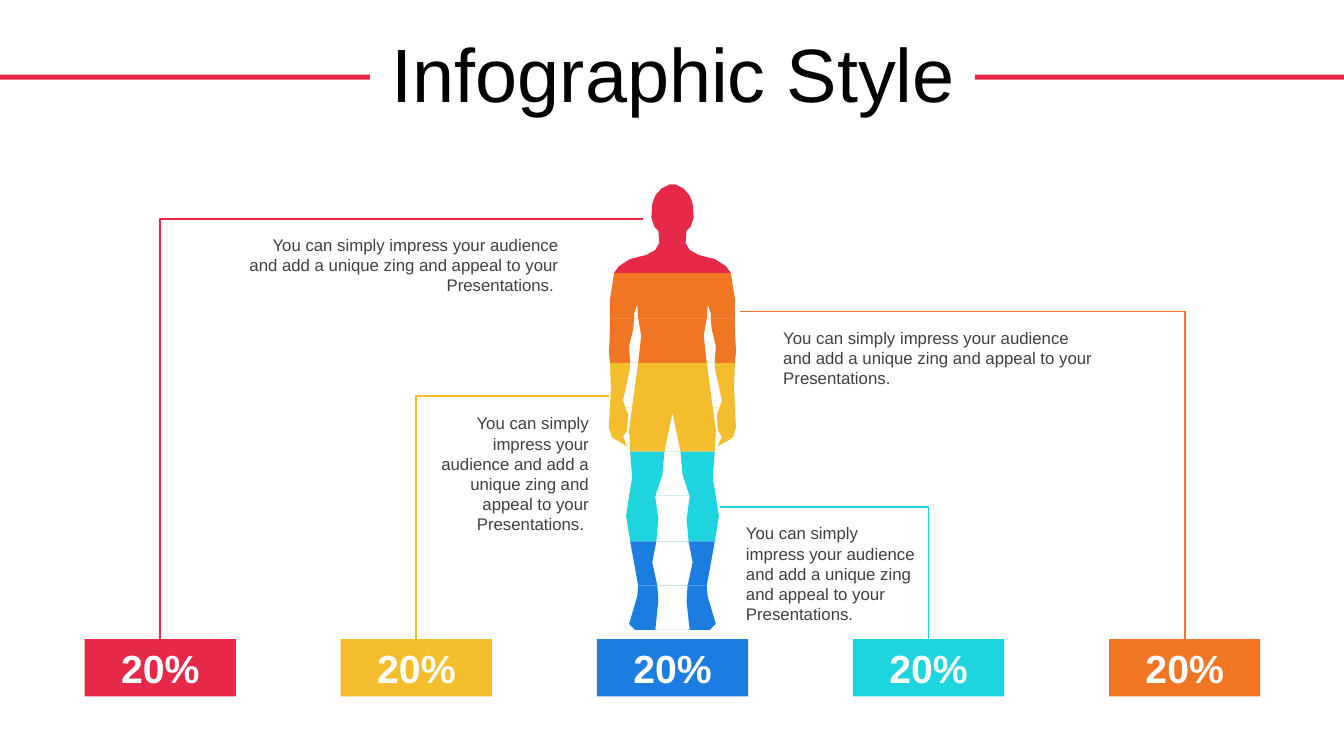
from itertools import pairwise

from lxml import etree
from pptx import Presentation
from pptx import util as u
from pptx.dml.color import RGBColor
from pptx.enum import shapes, text
from pptx.oxml.ns import qn

PX = 9144  # 100 px to the inch
RED = RGBColor(0xE6, 0x29, 0x49)
ORANGE = RGBColor(0xF0, 0x76, 0x24)
YELLOW = RGBColor(0xF4, 0xBD, 0x2D)
TEAL = RGBColor(0x1E, 0xD4, 0xDE)
BLUE = RGBColor(0x1C, 0x7D, 0xE1)
BLACK = RGBColor(0, 0, 0)
GREY = RGBColor(0x40, 0x40, 0x40)
WHITE = RGBColor(0xFF, 0xFF, 0xFF)
LEFT, CENTER, RIGHT = text.PP_ALIGN.LEFT, text.PP_ALIGN.CENTER, text.PP_ALIGN.RIGHT
TOP, MIDDLE = text.MSO_ANCHOR.TOP, text.MSO_ANCHOR.MIDDLE

prs = Presentation()
prs.slide_width, prs.slide_height = 1333 * PX, 750 * PX
slide = prs.slides.add_slide(prs.slide_layouts[6])
filled = []  # shapes with their colour


def write(shape, words, *, size, color, bold=False, align=LEFT, anchor=TOP, leading=None, before=None):
    frame = shape.text_frame
    frame.word_wrap = True
    frame.vertical_anchor = anchor
    paragraph = frame.paragraphs[0]
    paragraph.alignment = align
    paragraph.line_spacing = leading
    paragraph.space_before = before
    run = paragraph.add_run()
    run.text = words
    run.font.name = "Arial"
    run.font.size = u.Pt(size)
    run.font.bold = bold
    run.font.color.rgb = color


def clip_edge(edge, side, top, bottom):
    """Points of a body edge between two heights, on one side of the body axis."""
    points = []
    for (x0, y0), (x1, y1) in pairwise(edge):
        upper, lower = max(y0, top), min(y1, bottom)
        if upper < lower:
            points += [(body_axis + side * (x0 + (x1 - x0) * (y - y0) / (y1 - y0)), y)
                       for y in (upper, lower)]
    return points


# Title between two bars
for bar_left in (0, 967):
    bar = slide.shapes.add_shape(shapes.MSO_SHAPE.RECTANGLE, bar_left * PX, 74 * PX, 367 * PX, 5 * PX)
    filled.append((bar, RED))
title = slide.shapes.add_textbox(35 * PX, 31 * PX, 1266 * PX, 92 * PX)
write(title, "Infographic Style", size=54, color=BLACK, align=CENTER, anchor=MIDDLE,
      leading=0.9, before=u.Pt(10))

# Body: edges as (distance from the axis, height); gaps are cut out of the outer shape
body_axis, body_top, band_height = 667, 183, 44.2
outer = [(3, 183), (11, 187), (17, 194), (20, 202), (21, 216), (18, 225), (14, 229), (13, 241), (17, 248),
         (26, 253), (42, 257), (53, 264), (58, 272), (62, 297), (62, 327), (63, 349), (61, 385), (63, 424),
         (60, 434), (45, 443), (42, 448), (40, 474), (46, 512), (42, 537), (34, 581), (35, 592),
         (43, 619), (37, 625)]
trunk = [(35, 302), (34, 316), (31, 333), (34, 360), (43, 427), (42, 448)]
inner_arm = [(35, 302), (38, 311), (39, 327), (43, 343), (42, 365), (49, 397), (44, 411), (45, 427),
             (49, 433), (45, 443), (42, 448)]
inner_leg = [(0, 410), (8, 448), (10, 471), (17, 493), (14, 515), (16, 537), (20, 558), (15, 581),
             (14, 596), (17, 625)]
contours = [(outer, -1, outer, 1), (trunk, 1, inner_arm, 1), (trunk, -1, inner_arm, -1),
            (inner_leg, -1, inner_leg, 1)]
for band in range(10):
    top = body_top + band * band_height
    bottom = top + band_height
    builder = None
    for near_edge, near_side, far_edge, far_side in contours:
        near = clip_edge(near_edge, near_side, top, bottom)
        far = clip_edge(far_edge, far_side, top, bottom)
        if not near:
            continue
        if builder is None:
            builder = slide.shapes.build_freeform(*near[0], scale=PX)
        else:
            builder.move_to(*near[0])
        builder.add_line_segments(near[1:] + far[::-1], close=True)
    filled.append((builder.convert_to_shape(), [RED, ORANGE, YELLOW, TEAL, BLUE][band // 2]))

# Evenly spaced share boxes
box_width, box_pitch, box_top = 150, 254, 634
box_colors = [RED, YELLOW, BLUE, TEAL, ORANGE]
for column, color in enumerate(box_colors):
    share = slide.shapes.add_shape(shapes.MSO_SHAPE.RECTANGLE, (84 + column * box_pitch) * PX, box_top * PX,
                                   box_width * PX, 57 * PX)
    filled.append((share, color))
    write(share, "20%", size=28, color=WHITE, bold=True, align=CENTER, anchor=MIDDLE)

for shape, color in filled:
    shape.shadow.inherit = False
    shape.fill.solid()
    shape.fill.fore_color.rgb = color
    shape.line.fill.background()

# Leader from the body to each box, with its note
message = "You can simply impress your audience and add a unique zing and appeal to your Presentations."
callouts = [  # box colour, leader start, note left/top/width/height, alignment
    (RED, (638, 217), (231, 228, 333, 71), RIGHT),
    (YELLOW, (604, 393), (421, 405, 173, 131), RIGHT),
    (ORANGE, (734, 309), (767, 320, 333, 71), LEFT),
    (TEAL, (714, 503), (730, 514, 191, 111), LEFT),
]
for color, (start_x, start_y), note_box, align in callouts:
    box_center = 159 + box_colors.index(color) * box_pitch
    leader = slide.shapes.add_connector(shapes.MSO_CONNECTOR.ELBOW, start_x * PX, start_y * PX,
                                        box_center * PX, box_top * PX)
    leader.line.color.rgb = color
    leader.line.width = u.Pt(1.25)
    properties = leader._element.spPr
    properties.find(qn("a:prstGeom")).set("prst", "bentConnector2")
    etree.SubElement(properties, qn("a:effectLst"))

    note = slide.shapes.add_textbox(*(length * PX for length in note_box))
    write(note, message + " " if align == RIGHT else message, size=12, color=GREY, align=align)

prs.save("out.pptx")
